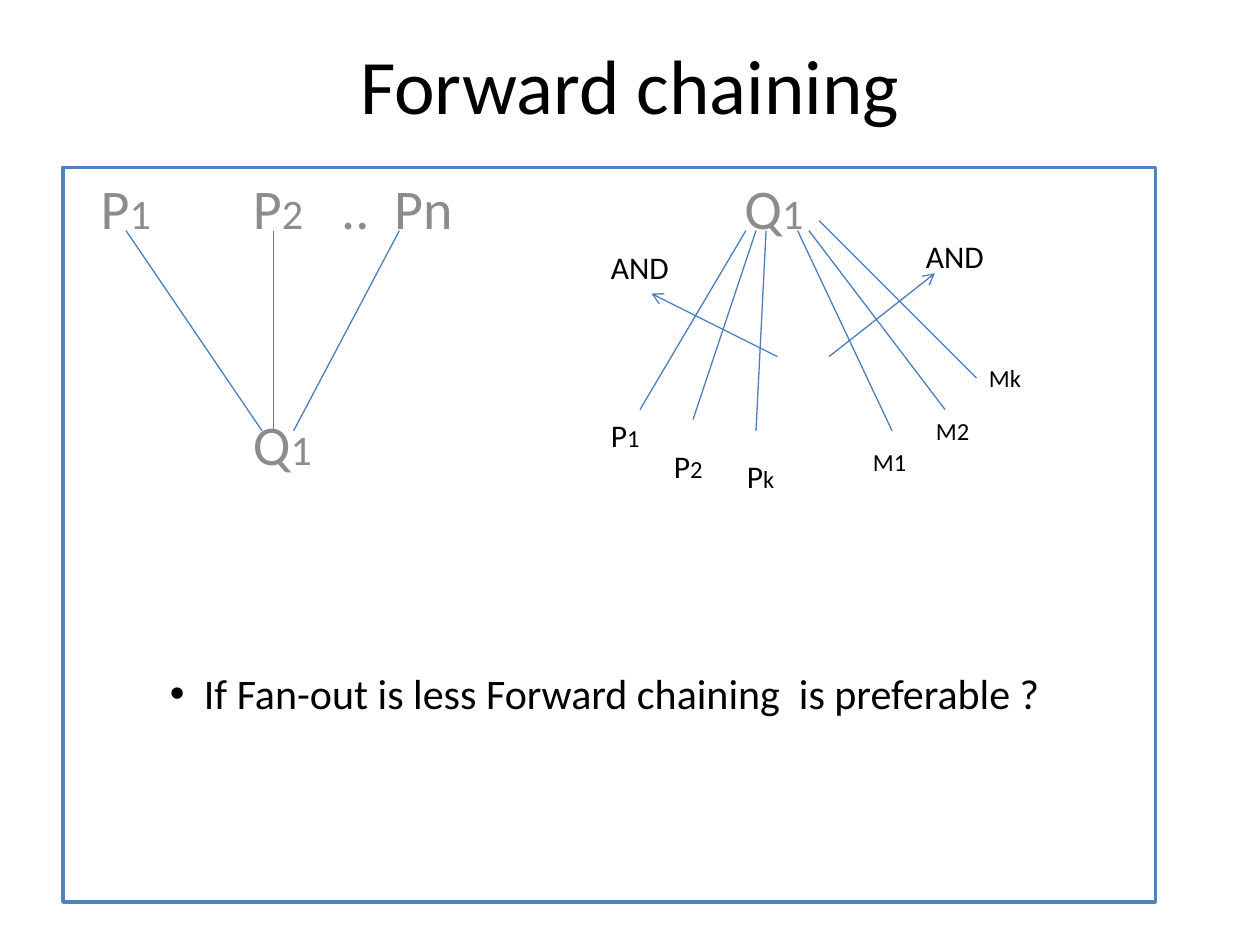
from pptx import Presentation
from pptx.dml.color import RGBColor
from pptx.enum.shapes import MSO_CONNECTOR as Conn, MSO_SHAPE as Shape
from pptx.enum.text import MSO_ANCHOR as Anchor, MSO_AUTO_SIZE as Fit, PP_ALIGN as Align
from pptx.oxml.ns import qn
from pptx.util import Inches, Pt
from lxml.etree import SubElement as Sub

FONT = "Calibri"
BLACK, GRAY, BLUE, EDGE = "000000", "8C8C8C", "4F81BD", "4B7EBC"


def color(code):
    return RGBColor.from_string(code)


def add_text(slide, box, runs, code=BLACK, wrap=True, fit=Fit.SHAPE_TO_FIT_TEXT):
    frame = slide.shapes.add_textbox(*map(Inches, box)).text_frame
    frame.word_wrap = wrap
    frame.auto_size = fit
    for text, size in runs:
        run = frame.paragraphs[0].add_run()
        run.text = text
        run.font.name = FONT
        run.font.size = Pt(size)
        run.font.color.rgb = color(code)
    return frame


def add_node(slide, left, top, *runs):
    add_text(slide, (left, top, 0.8, 0.63), runs, GRAY)


def add_line(slide, box, start, end, arrow=False):
    left, top = box[:2]
    ends = [Inches(base + part) for point in (start, end)
            for base, part in zip((left, top), point)]
    line = slide.shapes.add_connector(Conn.STRAIGHT, *ends)
    line.line.color.rgb = color(EDGE)
    line.line.width = Pt(0.75)
    if arrow:
        Sub(line.line._get_or_add_ln(), qn("a:tailEnd"), type="arrow")
    Sub(line._element.spPr, qn("a:effectLst"))


def add_title(slide, box):
    frame = add_text(slide, box, [("Forward chaining", 44)], fit=Fit.NONE)
    frame.vertical_anchor = Anchor.MIDDLE
    frame.paragraphs[0].alignment = Align.CENTER


def add_panel(slide, box):
    panel = slide.shapes.add_shape(Shape.RECTANGLE, *map(Inches, box))
    panel.shadow.inherit = False
    panel.fill.solid()
    panel.fill.fore_color.rgb = color("FFFFFF")
    panel.line.color.rgb = color(BLUE)
    panel.line.width = Pt(2)


def add_fan_in(slide, box):
    left, top = box[:2]
    nodes = [
        (-0.3, -0.5, ("P", 32), ("1", 24)),
        (0.91, -0.5, ("P", 32), ("2", 24)),
        (1.61, -0.5, ("..", 32)),
        (2.03, -0.5, ("Pn", 32)),
        (0.91, 1.37, ("Q", 32), ("1", 24)),
    ]
    for x, y, *runs in nodes:
        add_node(slide, left + x, top + y, *runs)
    for start, end in ((0, 1.08), (1.17, 1.17), (2.17, 1.33)):
        add_line(slide, box, (start, 0), (end, box[3]))


def add_fan_out(slide, box):
    left, top = box[:2]
    add_node(slide, left + 1.06, top - 0.42, ("Q", 32), ("1", 24))
    edges = [
        ((1.17, 0.08), (0.33, 1.5)),
        ((1.25, 0.08), (0.75, 1.58)),
        ((1.33, 0.08), (1.25, 1.67)),
        ((1.67, 0.08), (2.75, 1.5)),
        ((1.58, 0.08), (2.33, 1.67)),
        ((1.75, 0), (3, 1.25)),
    ]
    for start, end in edges:
        add_line(slide, box, start, end)
    for start, end in (((1.42, 1.08), (0.42, 0.58)), ((1.83, 1.08), (2.67, 0.42))):
        add_line(slide, box, start, end, arrow=True)

    labels = [
        (0, 1.5, 0.43, [("P", 18), ("1", 14)]),
        (0.5, 1.75, 0.43, [("P", 18), ("2", 14)]),
        (1.08, 1.83, 0.42, [("P", 18), ("k", 14)]),
        (2.08, 1.75, 0.47, [("M1", 14)]),
        (2.58, 1.5, 0.47, [("M2", 14)]),
        (3, 1.08, 0.46, [("Mk", 14)]),
        (0, 0.17, 0.67, [("AND", 18)]),
        (2.5, 0.08, 0.67, [("AND", 18)]),
    ]
    for x, y, width, runs in labels:
        add_text(slide, (left + x, top + y, width, 0.4), runs, wrap=False)


def add_note(slide, box):
    frame = add_text(slide, box, [("If Fan-out is less Forward chaining  is preferable ?", 24)])
    props = frame.paragraphs[0]._p.get_or_add_pPr()
    props.set("marL", str(Inches(0.27)))
    props.set("indent", str(Inches(-0.27)))
    Sub(props, qn("a:buFont"), typeface="Arial")
    Sub(props, qn("a:buChar"), char="•")


def main():
    deck = Presentation()
    deck.slide_width, deck.slide_height = Inches(10), Inches(7.5)
    slide = deck.slides.add_slide(deck.slide_layouts[6])
    add_title(slide, (0.75, 0.25, 8.5, 0.83))
    add_panel(slide, (0.5, 1.33, 8.67, 5.83))
    add_fan_in(slide, (1, 1.83, 2.17, 1.59))
    add_fan_out(slide, (4.75, 1.75, 3.46, 2.54))
    add_note(slide, (1.25, 5.25, 7.25, 0.5))
    deck.save("out.pptx")


if __name__ == "__main__":
    main()
